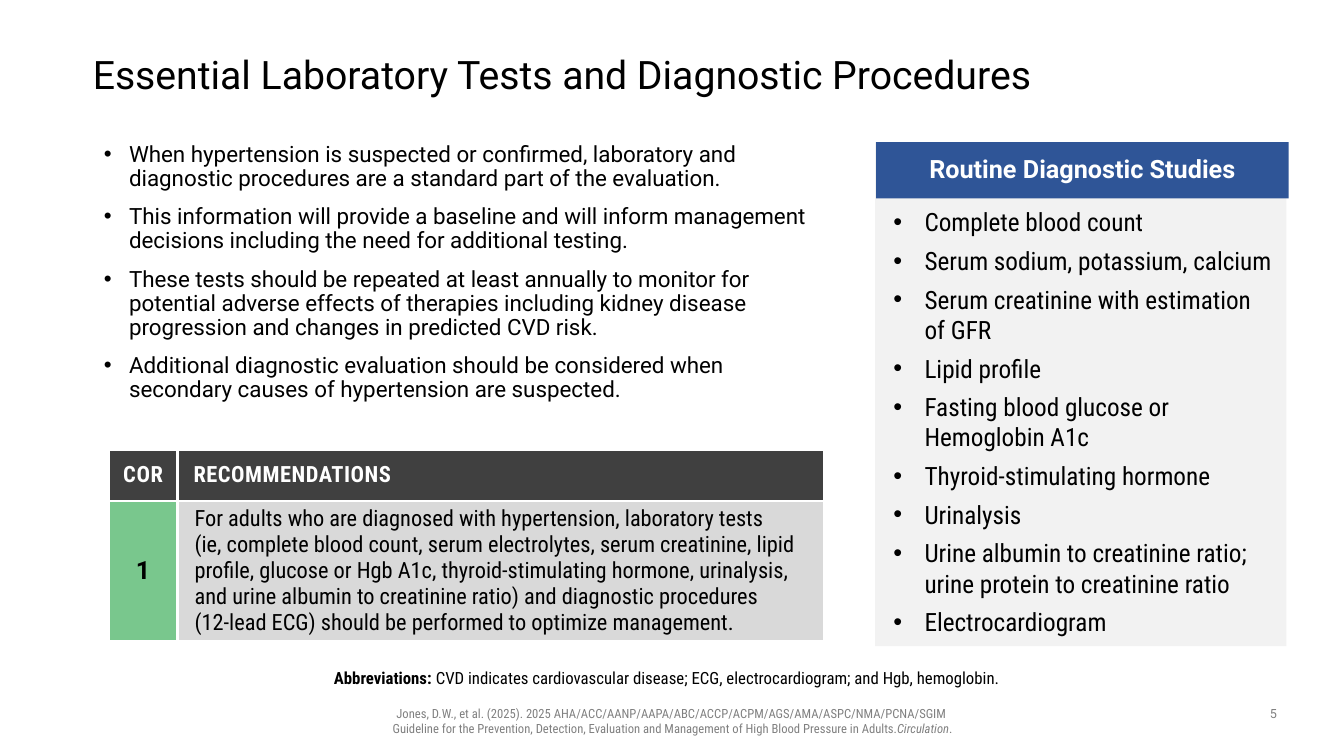
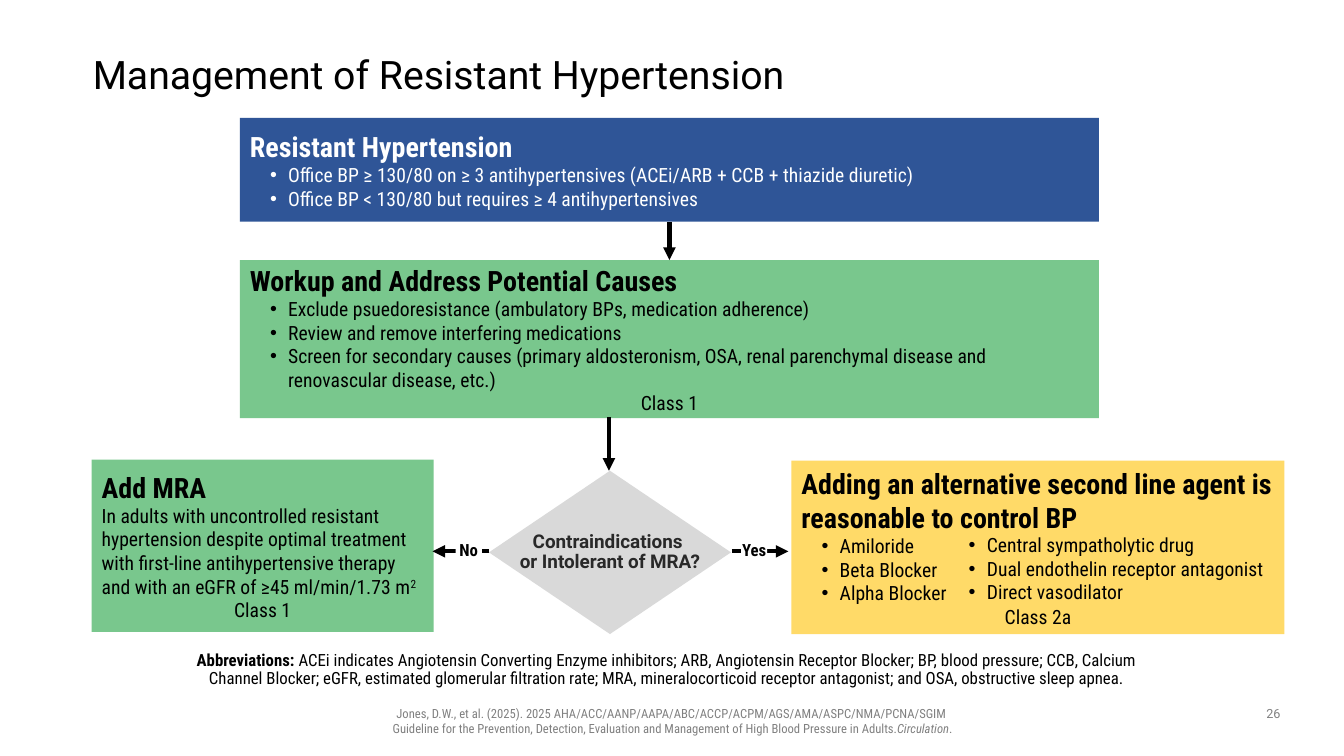
from copy import deepcopy

from lxml.etree import SubElement
from pptx import Presentation
from pptx.dml.color import RGBColor as Rgb
from pptx.enum.shapes import MSO_CONNECTOR as Link, MSO_SHAPE as Kind
from pptx.enum.text import MSO_ANCHOR as Anchor, MSO_AUTO_SIZE as Auto, PP_ALIGN as Align
from pptx.oxml.ns import qn
from pptx.util import Inches, Pt

HUES = {
    "black": "000000", "white": "FFFFFF", "blue": "2F5597", "green": "79C78D",
    "gold": "FFDA68", "dark": "404040", "gray": "D9D9D9", "pale": "F2F2F2",
    "mute": "808080", "ink": "292929",
}
SANS = "Roboto"
SLIM = "Roboto Condensed"
PAD = (0.1, 0.05, 0.1, 0.05)
EVEN = (0.1,) * 4
FLAT = (0,) * 4
CITE = [
    "Jones, D.W., et al. (2025). 2025 AHA/ACC/AANP/AAPA/ABC/ACCP/ACPM/AGS/AMA/ASPC/NMA/PCNA/SGIM \n"
    "Guideline for the Prevention, Detection, Evaluation and Management of High Blood Pressure in Adults.",
    ("Circulation", {"italic": True}),
    ".",
]


def hue(name):
    return Rgb.from_string(HUES[name])


def style(run, size, font, color, bold, italic=False, track=0, base=0):
    face = run.font
    face.size, face.name, face.bold, face.italic = Pt(size), font, bold, italic
    face.color.rgb = hue(color)
    props = run._r.get_or_add_rPr()
    if track:
        props.set("spc", str(round(track * 100)))
    if base:
        props.set("baseline", str(base * 1000))


def write(frame, text, size=14, font=SLIM, color="black", bold=False, align=Align.LEFT,
          bullet=None, left=0, lead=1.0, before=0, after=0, track=0):
    first = not frame.text
    para = frame.paragraphs[0] if first else frame.add_paragraph()
    props = para._p.get_or_add_pPr()
    props.set("marL", str(Inches(bullet[0] if bullet else left)))
    props.set("indent", str(Inches(-bullet[1] if bullet else 0)))
    if bullet:
        SubElement(props, qn("a:buFont"), typeface="Arial")
        SubElement(props, qn("a:buChar"), char="•")
    else:
        SubElement(props, qn("a:buNone"))
    para.alignment, para.line_spacing = align, lead
    para.space_before, para.space_after = Pt(0 if first else before), Pt(after)
    for part in [text] if isinstance(text, str) else text:
        words, extra = (part, {}) if isinstance(part, str) else part
        look = {"size": size, "font": font, "color": color, "bold": bold, "track": track}
        look.update(extra)
        for row, line in enumerate(words.split("\n")):
            if row:
                para.add_line_break()
                para._p[-1].append(deepcopy(run._r.rPr))
            run = para.add_run()
            run.text = line
            style(run, **look)


def setup(frame, anchor=Anchor.TOP, inset=PAD, wrap=True):
    frame.auto_size, frame.word_wrap, frame.vertical_anchor = Auto.NONE, wrap, anchor
    frame.margin_left, frame.margin_top, frame.margin_right, frame.margin_bottom = map(Inches, inset)
    return frame


class Deck:
    def __init__(self):
        self.show = Presentation()
        self.show.slide_width, self.show.slide_height = Inches(13.33), Inches(7.5)

    def page(self, title, number, note, layout=1):
        self.slide = self.show.slides.add_slide(self.show.slide_layouts[layout])
        head = self.hold(0, (0.92, 0.4, 11.5, 0.72), Anchor.MIDDLE, FLAT)
        write(head, title, size=28, font=SANS, lead=0.9)
        foot = self.hold(layout if layout == 1 else 2, (1.88, 6.42, 9.57, 0.46),
                         Anchor.BOTTOM, (0, 0.05, 0.1, 0.05))
        write(foot, [("Abbreviations: ", {"bold": True}), note], size=12,
              align=Align.CENTER, lead=0.9)
        write(self.label((2.36, 6.95, 8.62, 0.4)), CITE, size=9, color="mute", align=Align.CENTER)
        write(self.label((12.42, 6.95, 0.42, 0.26)), number, size=9, font=SANS,
              color="mute", align=Align.CENTER)

    def hold(self, slot, at, anchor=Anchor.TOP, inset=PAD):
        item = self.slide.placeholders[slot]
        item.left, item.top, item.width, item.height = map(Inches, at)
        return setup(item.text_frame, anchor, inset)

    def label(self, at):
        return setup(self.slide.shapes.add_textbox(*map(Inches, at)).text_frame)

    def box(self, at, fill, kind=Kind.RECTANGLE, anchor=Anchor.MIDDLE, inset=EVEN, wrap=True):
        item = self.slide.shapes.add_shape(kind, *map(Inches, at))
        item.shadow.inherit = False
        item.fill.solid()
        item.fill.fore_color.rgb = hue(fill)
        item.line.fill.background()
        return setup(item.text_frame, anchor, inset, wrap)

    def card(self, at, fill, title, points=(), color="black"):
        frame = self.box(at, fill)
        write(frame, title, size=20, bold=True, color=color)
        self.list(frame, points, bullet=(0.38, 0.18), color=color)
        return frame

    def list(self, frame, points, **look):
        for point in points:
            write(frame, point, **look)

    def arrow(self, *ends):
        line = self.slide.shapes.add_connector(Link.STRAIGHT, *map(Inches, ends))
        line.line.width = Pt(3)
        line.line.color.rgb = hue("black")
        SubElement(line.line._get_or_add_ln(), qn("a:tailEnd"), type="triangle")
        SubElement(line._element.spPr, qn("a:effectLst"))

    def table(self, at, cols, rows, cells):
        grid = self.slide.shapes.add_table(len(rows), len(cols), *map(Inches, at)).table
        grid.first_row = grid.horz_banding = False
        for col, width in zip(grid.columns, cols):
            col.width = Inches(width)
        for row, height in zip(grid.rows, rows):
            row.height = Inches(height)
        for cell, (text, fill, inset, look) in zip(grid.iter_cells(), cells):
            props = cell._tc.get_or_add_tcPr()
            for side in ("lnL", "lnR", "lnT", "lnB"):
                edge = SubElement(props, qn("a:" + side), w=str(Pt(2.25)))
                SubElement(SubElement(edge, qn("a:solidFill")), qn("a:srgbClr"), val=HUES["white"])
            cell.fill.solid()
            cell.fill.fore_color.rgb = hue(fill)
            cell.vertical_anchor = Anchor.MIDDLE
            cell.margin_left, cell.margin_top, cell.margin_right, cell.margin_bottom = map(Inches, inset)
            write(cell.text_frame, text, **look)


def tests(deck):
    deck.page("Essential Laboratory Tests and Diagnostic Procedures", "5",
              "CVD indicates cardiovascular disease; ECG, electrocardiogram; and Hgb, hemoglobin.",
              layout=3)
    deck.list(deck.hold(1, (0.93, 1.37, 7.27, 3)), [
        "When hypertension is suspected or confirmed, laboratory and diagnostic procedures are a standard part of the evaluation.",
        "This information will provide a baseline and will inform management decisions including the need for additional testing.",
        "These tests should be repeated at least annually to monitor for potential adverse effects of therapies including kidney disease progression and changes in predicted CVD risk.",
        "Additional diagnostic evaluation should be considered when secondary causes of hypertension are suspected.",
    ], size=16, font=SANS, bullet=(0.25, 0.25), lead=0.9, before=10)
    head = {"size": 16, "color": "white", "bold": True}
    tight = (0.05,) * 4
    advice = (
        "For adults who are diagnosed with hypertension, laboratory tests \n"
        "(ie, complete blood count, serum electrolytes, serum creatinine, lipid profile, glucose or Hgb A1c, "
        "thyroid-stimulating hormone, urinalysis, and urine albumin to creatinine ratio) and diagnostic procedures \n"
        "(12-lead ECG) should be performed to optimize management."
    )
    deck.table((1.08, 4.46, 7.1, 1.9), (0.68, 6.42), (0.51, 1.39), [
        ("COR", "dark", PAD, {**head, "align": Align.CENTER, "track": 0.5}),
        ("RECOMMENDATIONS", "dark", PAD, {**head, "left": 0.06, "track": 0.4}),
        ("1", "green", tight, {"size": 18, "font": SANS, "bold": True, "align": Align.CENTER}),
        (advice, "gray", tight, {"size": 16, "left": 0.12}),
    ])
    panel = deck.box((8.68, 1.41, 4.08, 5), "pale", anchor=Anchor.TOP, inset=(0.18, 0.64, 0.09, 0.05))
    deck.list(panel, [
        "Complete blood count",
        "Serum sodium, potassium, calcium",
        "Serum creatinine with estimation of GFR",
        "Lipid profile",
        "Fasting blood glucose or Hemoglobin A1c",
        "Thyroid-stimulating hormone",
        "Urinalysis",
        "Urine albumin to creatinine ratio; urine protein to creatinine ratio",
        "Electrocardiogram",
    ], size=18, bullet=(0.31, 0.31), after=6)
    write(deck.box((8.69, 1.41, 4.09, 0.56), "blue"), "Routine Diagnostic Studies",
          size=18, font=SANS, color="white", bold=True, align=Align.CENTER, lead=0.9)


def manage(deck):
    deck.page("Management of Resistant Hypertension", "26",
              "ACEi indicates Angiotensin Converting Enzyme inhibitors; ARB, Angiotensin Receptor Blocker; "
              "BP, blood pressure; CCB, Calcium Channel Blocker; eGFR, estimated glomerular filtration rate; "
              "MRA, mineralocorticoid receptor antagonist; and OSA, obstructive sleep apnea.")
    deck.card((2.38, 1.17, 8.52, 1.03), "blue", "Resistant Hypertension", [
        "Office BP ≥ 130/80 on ≥ 3 antihypertensives (ACEi/ARB + CCB + thiazide diuretic)",
        "Office BP < 130/80 but requires ≥ 4 antihypertensives",
    ], color="white")
    work = deck.card((2.38, 2.58, 8.52, 1.57), "green", "Workup and Address Potential Causes", [
        "Exclude psuedoresistance (ambulatory BPs, medication adherence)",
        "Review and remove interfering medications",
        "Screen for secondary causes (primary aldosteronism, OSA, renal parenchymal disease and renovascular disease, etc.)",
    ])
    add = deck.card((0.91, 4.56, 3.39, 1.71), "green", "Add MRA")
    write(add, [
        "In adults with uncontrolled resistant hypertension despite optimal treatment with first-line "
        "antihypertensive therapy and with an eGFR of ≥45 ml/min/1.73 m",
        ("2", {"base": 30}),
    ])
    other = deck.card((7.85, 4.57, 4.89, 1.72), "gold",
                      "Adding an alternative second line agent is reasonable to control BP",
                      ["Amiloride", "Beta Blocker", "Alpha Blocker"])
    for frame, grade in ((work, "1"), (add, "1"), (other, "2a")):
        write(frame, "Class " + grade, align=Align.CENTER)
    deck.list(deck.label((9.31, 5.24, 3.54, 0.81)), [
        "Central sympatholytic drug",
        "Dual endothelin receptor antagonist",
        "Direct vasodilator",
    ], bullet=(0.38, 0.18))
    ask = deck.box((4.85, 4.67, 2.4, 1.62), "gray", Kind.DIAMOND, inset=FLAT, wrap=False)
    write(ask, "Contraindications \nor Intolerant of MRA?", size=13.5, font=SANS,
          color="ink", bold=True, align=Align.CENTER, lead=0.9)
    for ends in ((6.64, 2.2, 6.64, 2.58), (6.04, 4.14, 6.04, 4.67),
                 (4.85, 5.47, 4.29, 5.47), (7.26, 5.47, 7.82, 5.47)):
        deck.arrow(*ends)
    for left, word in ((7.35, "Yes"), (4.52, "No")):
        tag = deck.box((left, 5.35, 0.26, 0.2), "white", anchor=Anchor.TOP, inset=FLAT, wrap=False)
        write(tag, word, size=12, bold=True, align=Align.CENTER)


def main():
    deck = Deck()
    tests(deck)
    manage(deck)
    deck.show.save("out.pptx")


if __name__ == "__main__":
    main()
